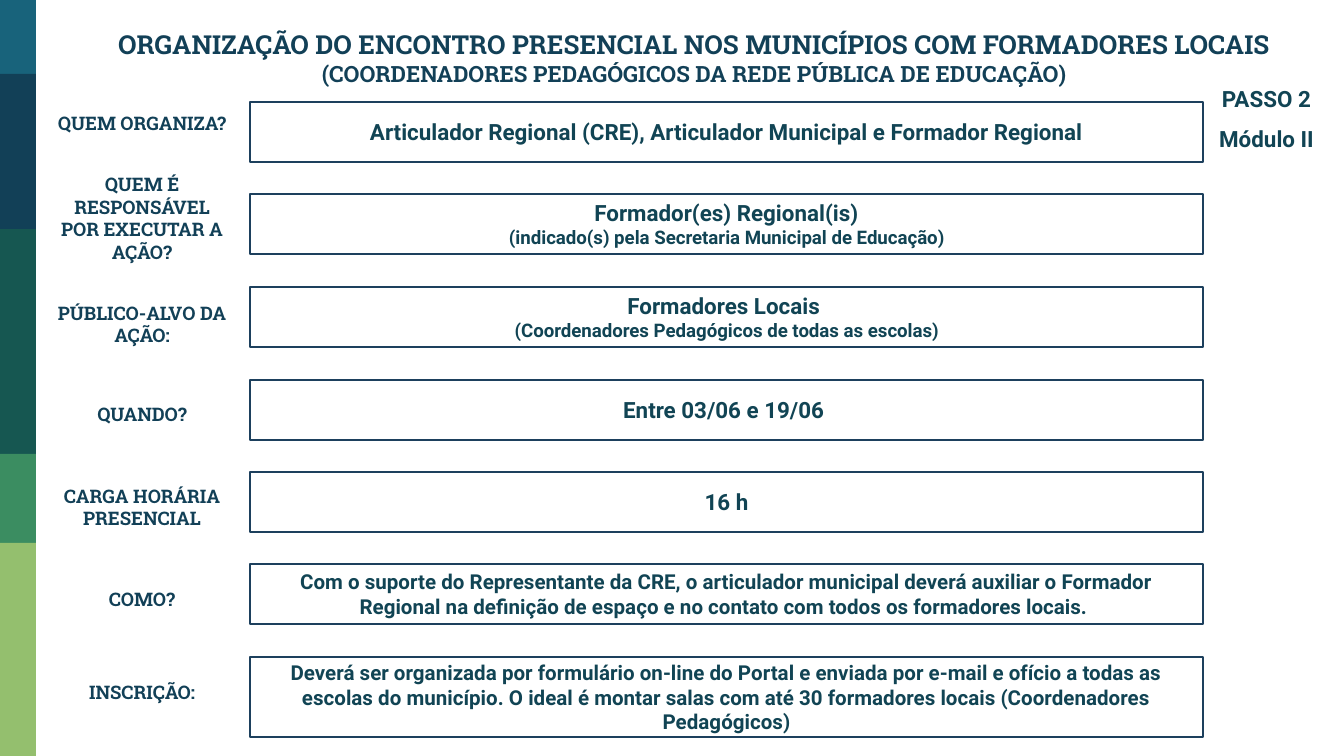
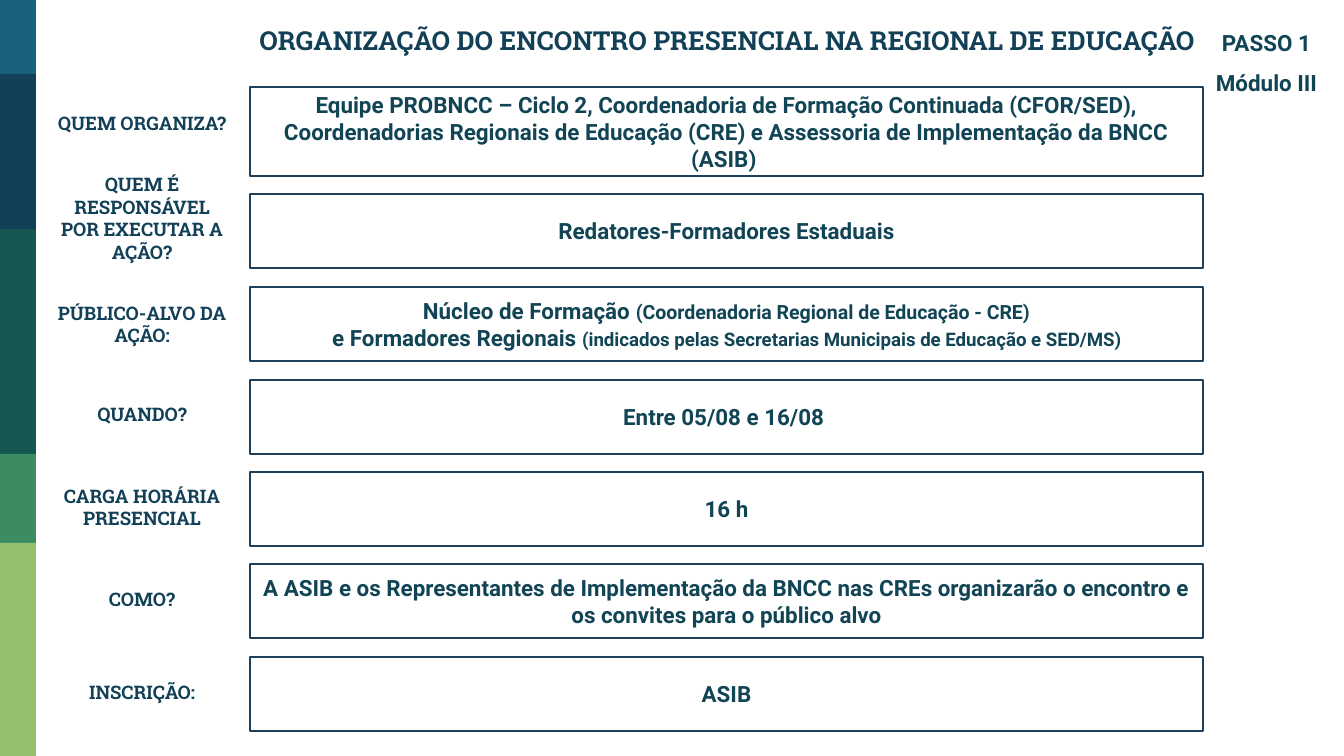
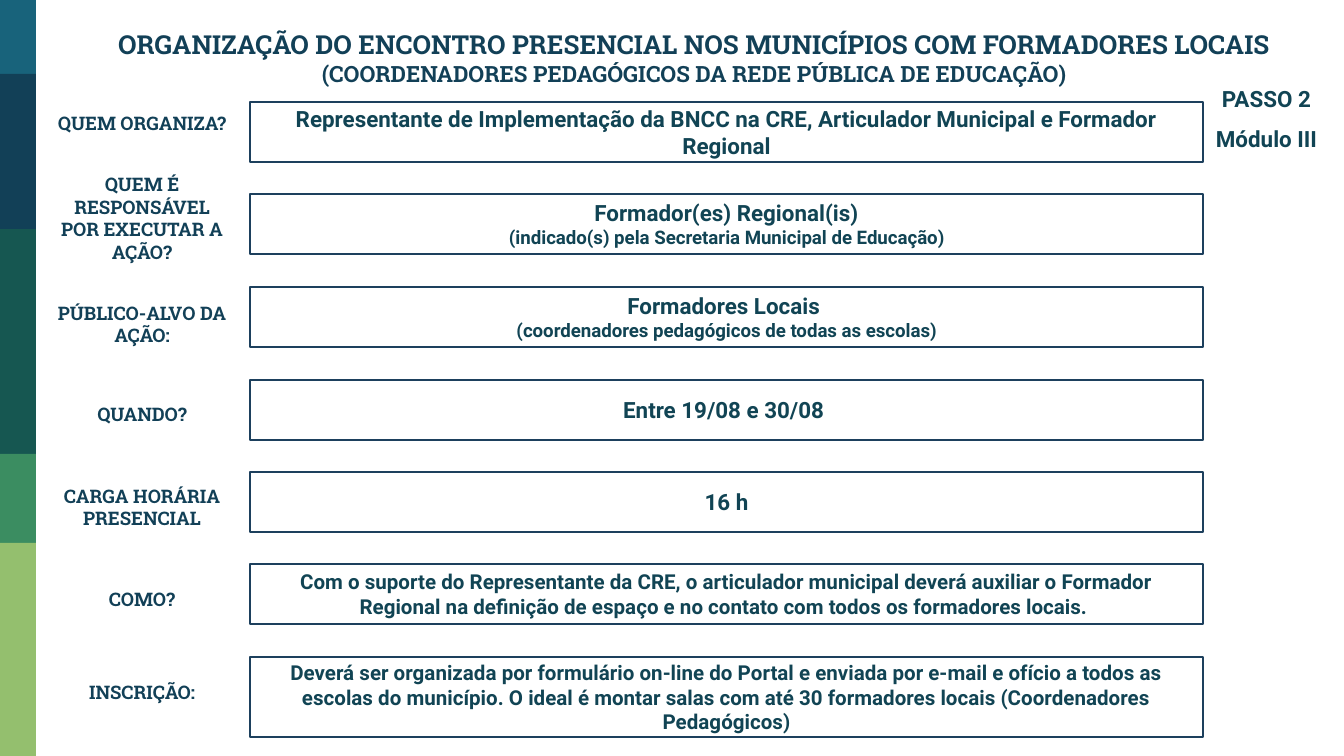
import pptx
import pptx.dml.color
import pptx.enum.shapes
import pptx.enum.text
import pptx.util

RGBColor = pptx.dml.color.RGBColor
RECTANGLE = pptx.enum.shapes.MSO_SHAPE.RECTANGLE

TEAL_BLUE = RGBColor(0x18, 0x63, 0x7B)
NAVY = RGBColor(0x12, 0x40, 0x57)
DARK_GREEN = RGBColor(0x16, 0x57, 0x51)
GREEN = RGBColor(0x3B, 0x8D, 0x61)
LIME = RGBColor(0x94, 0xBF, 0x6E)
ANSWER_INK = RGBColor(0x11, 0x44, 0x54)
OUTLINE = RGBColor(0x1D, 0x40, 0x5D)

HEADING_STYLE = ("Roboto Slab", NAVY)
ANSWER_STYLE = ("Roboto", ANSWER_INK)

SLIDE_W, SLIDE_H = 1344, 756
BAND_W = 36
BANDS = [(0, 78, TEAL_BLUE), (74, 156, NAVY), (229, 226, DARK_GREEN),
         (454, 89, GREEN), (543, 213, LIME)]
FIRST_ROW, ROW_SPAN, ROW_COUNT = 102, 555, 7
QUESTION_X, QUESTION_W, QUESTION_H = 44, 196, 38
ANSWER_X, ANSWER_W = 250, 953
STEP_X, STEP_W, STEP_H, STEP_GAP = 1189, 155, 55, 40

QUESTIONS = [
    ("QUEM ORGANIZA?", 2),
    ("QUEM É RESPONSÁVEL POR EXECUTAR A AÇÃO?", 5),
    ("PÚBLICO-ALVO DA AÇÃO:", 18),
    ("QUANDO?", 15),
    ("CARGA HORÁRIA PRESENCIAL", 16),
    ("COMO?", 16),
    ("INSCRIÇÃO:", 16),
]

LOCAL_TITLE = [
    ("ORGANIZAÇÃO DO ENCONTRO PRESENCIAL NOS MUNICÍPIOS COM FORMADORES LOCAIS ", 14),
    ("(COORDENADORES PEDAGÓGICOS DA REDE PÚBLICA DE EDUCAÇÃO)", 12),
]
REGIONAL_TITLE = [("ORGANIZAÇÃO DO ENCONTRO PRESENCIAL NA REGIONAL DE EDUCAÇÃO", 14)]

REGIONAL_ANSWERS = [
    [[("Equipe PROBNCC – Ciclo 2, Coordenadoria de Formação Continuada (CFOR/SED), "
       "Coordenadorias Regionais de Educação (CRE) e Assessoria de Implementação "
       "da BNCC (ASIB) ", 12)]],
    [[("Redatores-Formadores Estaduais", 12)]],
    [[("Núcleo de Formação ", 12), ("(Coordenadoria Regional de Educação - CRE)", 10.5)],
     [("e Formadores Regionais ", 12),
      ("(indicados pelas Secretarias Municipais de Educação e SED/MS)", 10)]],
    [[("Entre 05/08 e 16/08 ", 12)]],
    [[("16 h", 12)]],
    [[("A ASIB e os Representantes de Implementação da BNCC nas CREs organizarão "
       "o encontro e os convites para o público alvo", 12)]],
    [[("ASIB", 12)]],
]


def local_answers(organizers, audience, dates, recipients):
    return [
        [[(organizers, 12)]],
        [[("Formador(es) Regional(is)", 12)],
         [("(indicado(s) pela Secretaria Municipal de Educação)", 10)]],
        [[("Formadores Locais ", 12)], [(audience, 10)]],
        [[(dates, 12)]],
        [[("16 h", 12)]],
        [[("Com o suporte do Representante da CRE, o articulador municipal deverá "
           "auxiliar o Formador Regional na definição de espaço e no contato com "
           "todos os formadores locais. ", 11)]],
        [[("Deverá ser organizada por formulário on-line do Portal e enviada por "
           f"e-mail e ofício a {recipients} escolas do município. O ideal é montar "
           "salas com até 30 formadores locais (Coordenadores Pedagógicos)", 11)]],
    ]


def px(length):
    return pptx.util.Emu(length * 9144000 // 1344)


def emu_box(box):
    return [px(length) for length in box]


def write(frame, paragraphs, style):
    font_name, ink = style
    frame.word_wrap = True
    frame.vertical_anchor = pptx.enum.text.MSO_ANCHOR.MIDDLE
    frame.margin_left = frame.margin_right = pptx.util.Inches(0.1)
    frame.margin_top = frame.margin_bottom = pptx.util.Inches(0.1)
    for index, runs in enumerate(paragraphs):
        paragraph = frame.add_paragraph() if index else frame.paragraphs[0]
        paragraph.alignment = pptx.enum.text.PP_ALIGN.CENTER
        for text, size in runs:
            run = paragraph.add_run()
            run.text = text
            run.font.name = font_name
            run.font.size = pptx.util.Pt(size)
            run.font.bold = True
            run.font.color.rgb = ink


def add_label(slide, box, runs, style):
    label = slide.shapes.add_textbox(*emu_box(box))
    write(label.text_frame, [runs], style)


def add_answer(slide, box, paragraphs):
    answer = slide.shapes.add_shape(RECTANGLE, *emu_box(box))
    answer.shadow.inherit = False
    answer.fill.background()
    answer.line.color.rgb = OUTLINE
    answer.line.width = pptx.util.Pt(0.75)
    write(answer.text_frame, paragraphs, ANSWER_STYLE)


def add_step(slide, top, lines):
    for index, line in enumerate(lines):
        box = (STEP_X, top + index * STEP_GAP, STEP_W, STEP_H)
        add_label(slide, box, [(line, 12)], ANSWER_STYLE)


def add_rows(slide, answers, height, first_rise=0, first_height=None, last_height=None):
    heights = [height] * ROW_COUNT
    heights[0] = first_height or height
    heights[-1] = last_height or height
    for index, ((question, offset), answer) in enumerate(zip(QUESTIONS, answers)):
        top = FIRST_ROW + round(index * ROW_SPAN / (ROW_COUNT - 1))
        add_label(slide, (QUESTION_X, top + offset, QUESTION_W, QUESTION_H),
                  [(question, 10)], HEADING_STYLE)
        rise = 0 if index else first_rise
        add_answer(slide, (ANSWER_X, top - rise, ANSWER_W, heights[index]), answer)


def add_master_bands(master, slide):
    for index, (top, height, color) in enumerate(BANDS):
        band = slide.shapes.add_shape(RECTANGLE, *emu_box((0, top, BAND_W, height)))
        band.shadow.inherit = False
        band.fill.solid()
        band.fill.fore_color.rgb = color
        band.line.fill.background()
        band.element.nvSpPr.cNvPr.id = 100 + index
        master.shapes.element.append(band.element)


def build_local(slide, module, answers):
    add_rows(slide, answers, 60, last_height=80)
    add_label(slide, (83, 32, 1223, 51), LOCAL_TITLE, HEADING_STYLE)
    add_step(slide, 71, ["PASSO 2", module])


def build_regional(slide, module, answers):
    add_label(slide, (214, 15, 1027, 51), REGIONAL_TITLE, HEADING_STYLE)
    add_rows(slide, answers, 74, first_rise=15, first_height=89)
    add_step(slide, 15, ["PASSO 1", module])


def main():
    deck = pptx.Presentation()
    deck.slide_width, deck.slide_height = px(SLIDE_W), px(SLIDE_H)
    blank = deck.slide_layouts[6]
    local_two, regional_three, local_three = [deck.slides.add_slide(blank) for _ in range(3)]
    add_master_bands(deck.slide_master, local_two)
    build_local(local_two, "Módulo II", local_answers(
        "Articulador Regional (CRE), Articulador Municipal e Formador Regional",
        "(Coordenadores Pedagógicos de todas as escolas)",
        "Entre 03/06 e 19/06 ", "todas as"))
    build_regional(regional_three, "Módulo III", REGIONAL_ANSWERS)
    build_local(local_three, "Módulo III", local_answers(
        "Representante de Implementação da BNCC na CRE, Articulador Municipal "
        "e Formador Regional",
        "(coordenadores pedagógicos de todas as escolas)",
        "Entre 19/08 e 30/08 ", "todos as"))
    deck.save("out.pptx")


if __name__ == "__main__":
    main()
